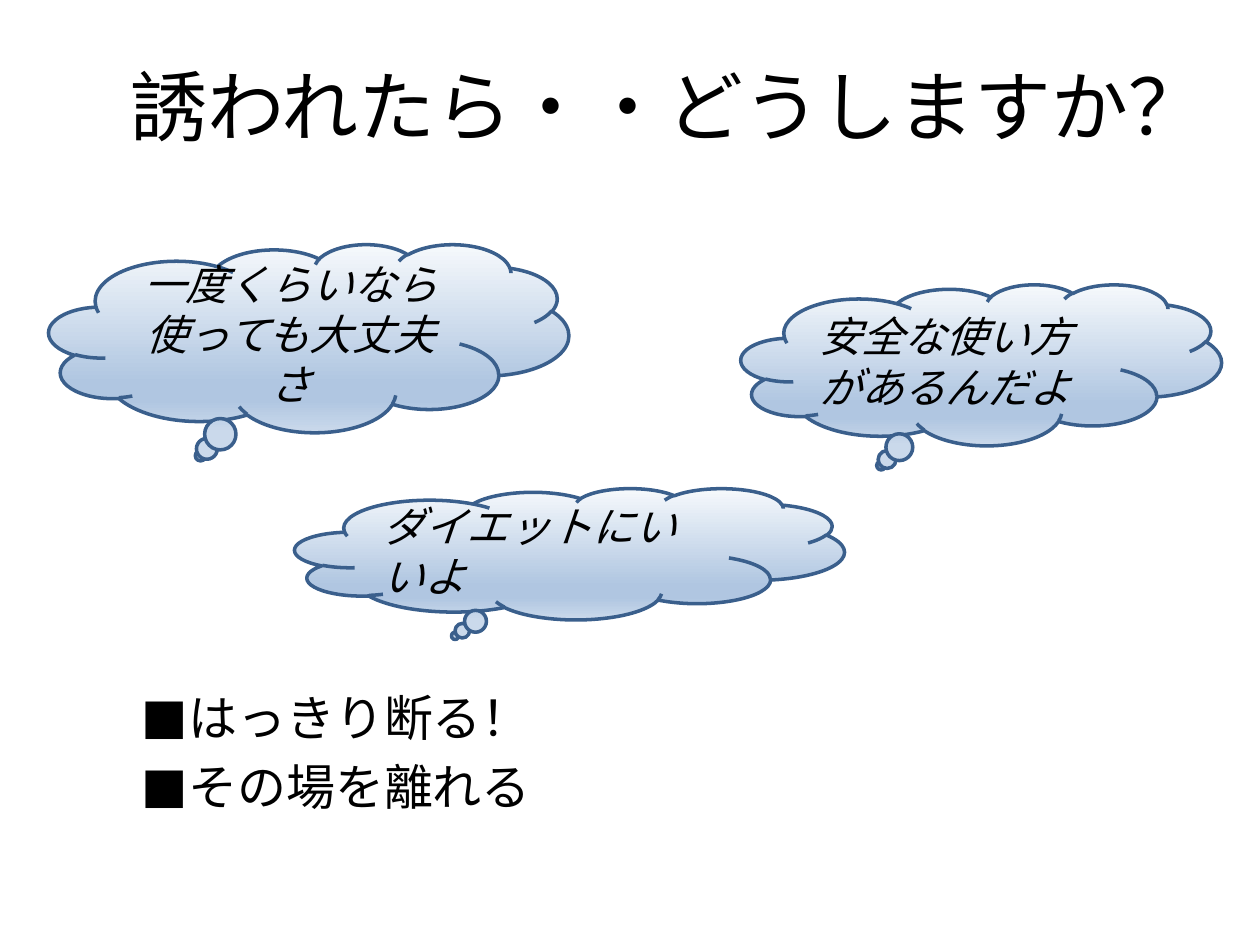
from lxml.etree import SubElement
from pptx import Presentation
from pptx.dml.color import RGBColor
from pptx.enum.shapes import MSO_SHAPE as SHAPE
from pptx.enum.text import MSO_ANCHOR as ANCHOR, PP_ALIGN as ALIGN
from pptx.oxml.ns import qn
from pptx.util import Pt

COLORS = {"text": "000000", "outline": "3A5F8C", "top": "F6F9FC",
          "middle": "B0C6E1", "bottom": "CAD9EB"}
CLOUD_STOPS = [(0, "top"), (74, "middle"), (83, "middle"), (100, "bottom")]


class SlideBuilder:
    font = "Calibri"

    def __init__(self, slide):
        self.slide = slide

    def format_text(self, tf, size, align, italic=None):
        tf.word_wrap = True
        for p in tf.paragraphs:
            p.alignment = align
            for r in p.runs:
                r.font.name, r.font.size, r.font.italic = self.font, Pt(size), italic
                r.font.color.rgb = RGBColor.from_string(COLORS["text"])
                SubElement(r.font._element, qn("a:ea"), typeface=self.font)

    def title(self, text, left, top, width, height):
        sp = self.slide.shapes.title
        sp.left, sp.top, sp.width, sp.height = map(Pt, (left, top, width, height))
        tf = sp.text_frame
        tf.text = text
        tf.vertical_anchor = ANCHOR.MIDDLE
        self.format_text(tf, 44, ALIGN.CENTER)

    def bullets(self, items, left, top, width, height, size=28, indent=27):
        sp = self.slide.shapes.add_textbox(*map(Pt, (left, top, width, height)))
        tf = sp.text_frame
        tf.text = "\n".join(items)
        self.format_text(tf, size, ALIGN.LEFT)
        for p in tf.paragraphs:
            p.space_before = Pt(size * 0.2)
            pPr = p._p.get_or_add_pPr()
            pPr.set("marL", str(Pt(indent)))
            pPr.set("indent", str(-Pt(indent)))
            SubElement(pPr, qn("a:buFont"), typeface=self.font)
            SubElement(pPr, qn("a:buChar"), char="■")

    def cloud(self, text, left, top, width, height, align=ALIGN.LEFT):
        sp = self.slide.shapes.add_shape(
            SHAPE.CLOUD_CALLOUT, *map(Pt, (left, top, width, height)))
        sp.shadow.inherit = False
        sp.line.color.rgb = RGBColor.from_string(COLORS["outline"])
        sp.line.width = Pt(2)
        self.gradient(sp)
        tf = sp.text_frame
        tf.text = text
        tf.vertical_anchor = ANCHOR.MIDDLE
        self.format_text(tf, 24, align, italic=True)

    def gradient(self, sp):
        sp.fill.gradient()
        sp.fill.gradient_angle = 270  # counter-clockwise: runs downwards
        stops = sp._element.spPr.find(qn("a:gradFill")).find(qn("a:gsLst"))
        for gs in list(stops):
            stops.remove(gs)
        for percent, color in CLOUD_STOPS:
            gs = SubElement(stops, qn("a:gs"), pos=str(percent * 1000))
            SubElement(gs, qn("a:srgbClr"), val=COLORS[color])


def main():
    prs = Presentation()
    prs.slide_width, prs.slide_height = Pt(720), Pt(540)
    s = SlideBuilder(prs.slides.add_slide(prs.slide_layouts[5]))

    # Question and answers
    s.title("誘われたら・・どうしますか？", 54, 15, 612, 90)
    s.bullets(["はっきり断る！", "その場を離れる"], 73.5, 389.5, 610.5, 105)

    # Tempting thoughts
    s.cloud("一度くらいなら使っても大丈夫さ", 28, 139.5, 297, 107.5, ALIGN.CENTER)
    s.cloud("ダイエットにいいよ", 168.5, 279, 314, 75)
    s.cloud("安全な使い方があるんだよ", 423.5, 162.5, 274.5, 92)

    prs.save("out.pptx")


if __name__ == "__main__":
    main()
